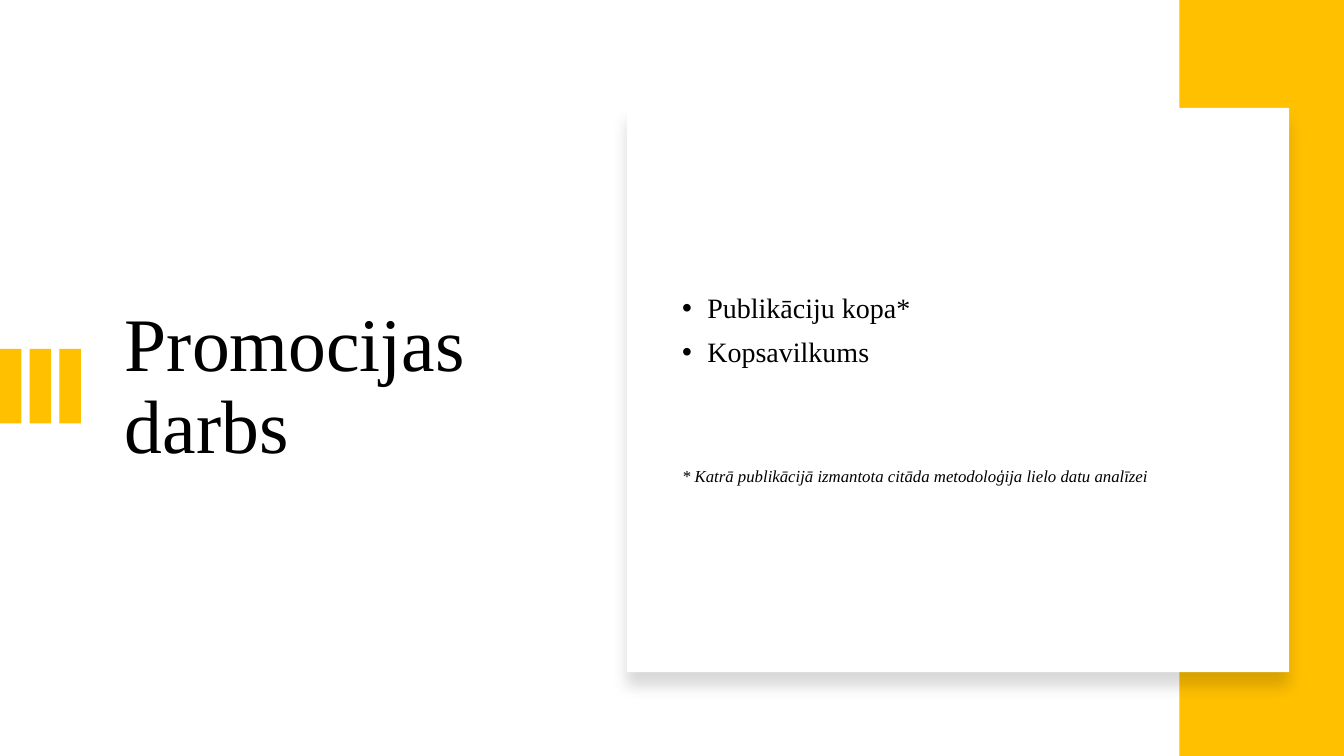
from dataclasses import dataclass

from lxml import etree
from pptx import Presentation
from pptx.dml.color import RGBColor
from pptx.enum.shapes import MSO_SHAPE
from pptx.enum.text import MSO_ANCHOR
from pptx.oxml.ns import qn
from pptx.util import Cm, Pt

RECTANGLE = MSO_SHAPE.RECTANGLE
MIDDLE = MSO_ANCHOR.MIDDLE


@dataclass(frozen=True)
class Theme:
    accent: str = "FFC000"
    card: str = "FFFFFF"
    ink: str = "000000"
    font: str = "Times New Roman"
    title_size: int = 54
    body_size: int = 20
    note_size: int = 12


THEME = Theme()


def add_block(slide, box, color):
    block = slide.shapes.add_shape(RECTANGLE, *map(Cm, box))
    block.shadow.inherit = False
    block.fill.solid()
    block.fill.fore_color.rgb = RGBColor.from_string(color)
    block.line.fill.background()
    return block


def add_soft_shadow(block):
    effects = block._element.spPr.find(qn("a:effectLst"))
    shadow = etree.SubElement(effects, qn("a:outerShdw"), {
        "blurRad": str(Pt(11)), "dist": str(Pt(10)), "dir": "5400000",
        "algn": "t", "rotWithShape": "0"})
    color = etree.SubElement(shadow, qn("a:srgbClr"), val=THEME.ink)
    etree.SubElement(color, qn("a:alpha"), val="15000")


def add_text_frame(slide, box):
    frame = slide.shapes.add_textbox(*map(Cm, box)).text_frame
    frame.word_wrap = True
    frame.vertical_anchor = MIDDLE
    return frame


def write(paragraph, text, size, space_before=0, italic=False):
    run = paragraph.add_run()
    run.text = text
    paragraph.line_spacing = 0.9
    paragraph.space_before = Pt(space_before)
    font_format = {"name": THEME.font, "size": Pt(size), "italic": italic}
    for attribute, value in font_format.items():
        setattr(run.font, attribute, value)
    run.font.color.rgb = RGBColor.from_string(THEME.ink)


def add_bullet(paragraph):
    properties = paragraph._p.get_or_add_pPr()
    indent = Cm(0.635)
    properties.set("marL", str(indent))
    properties.set("indent", str(-indent))
    color = etree.SubElement(properties, qn("a:buClr"))
    etree.SubElement(color, qn("a:srgbClr"), val=THEME.ink)
    etree.SubElement(properties, qn("a:buFont"), typeface="Arial")
    etree.SubElement(properties, qn("a:buChar"), char="•")


def add_stripes(slide, box, count=3, gap=0.21):
    """Fill the box with equal upright stripes."""
    left, top, width, height = box
    stripe_width = (width - gap * (count - 1)) / count
    for index in range(count):
        stripe_left = left + index * (stripe_width + gap)
        add_block(slide, (stripe_left, top, stripe_width, height), THEME.accent)


def add_title(slide, box, title):
    frame = add_text_frame(slide, box)
    write(frame.paragraphs[0], title, THEME.title_size)


def add_card(slide, box, points, note):
    """Place a white card with bullet points and a footnote set apart below."""
    left, top, width, height = box
    add_soft_shadow(add_block(slide, box, THEME.card))
    side, edge = 1.14, 1
    frame = add_text_frame(
        slide, (left + side, top + edge, width - 2 * side + 0.2, height - 2 * edge))
    for index, point in enumerate(points):
        paragraph = frame.add_paragraph() if index else frame.paragraphs[0]
        write(paragraph, point, THEME.body_size, space_before=10 if index else 0)
        add_bullet(paragraph)
    write(frame.add_paragraph(), note, THEME.note_size, space_before=71, italic=True)


def main():
    presentation = Presentation()
    presentation.slide_width, presentation.slide_height = Cm(33.87), Cm(19.05)
    slide = presentation.slides.add_slide(presentation.slide_layouts[6])

    add_title(slide, (2.9, 3.7, 10.82, 12.17), "Promocijas darbs")
    add_stripes(slide, (0, 8.79, 2.04, 1.88))
    add_block(slide, (29.72, 0, 4.15, 19.05), THEME.accent)
    add_card(slide, (15.8, 2.72, 16.69, 14.22),
             ["Publikāciju kopa*", "Kopsavilkums"],
             "* Katrā publikācijā izmantota citāda metodoloģija lielo datu analīzei")

    presentation.save("out.pptx")


if __name__ == "__main__":
    main()
